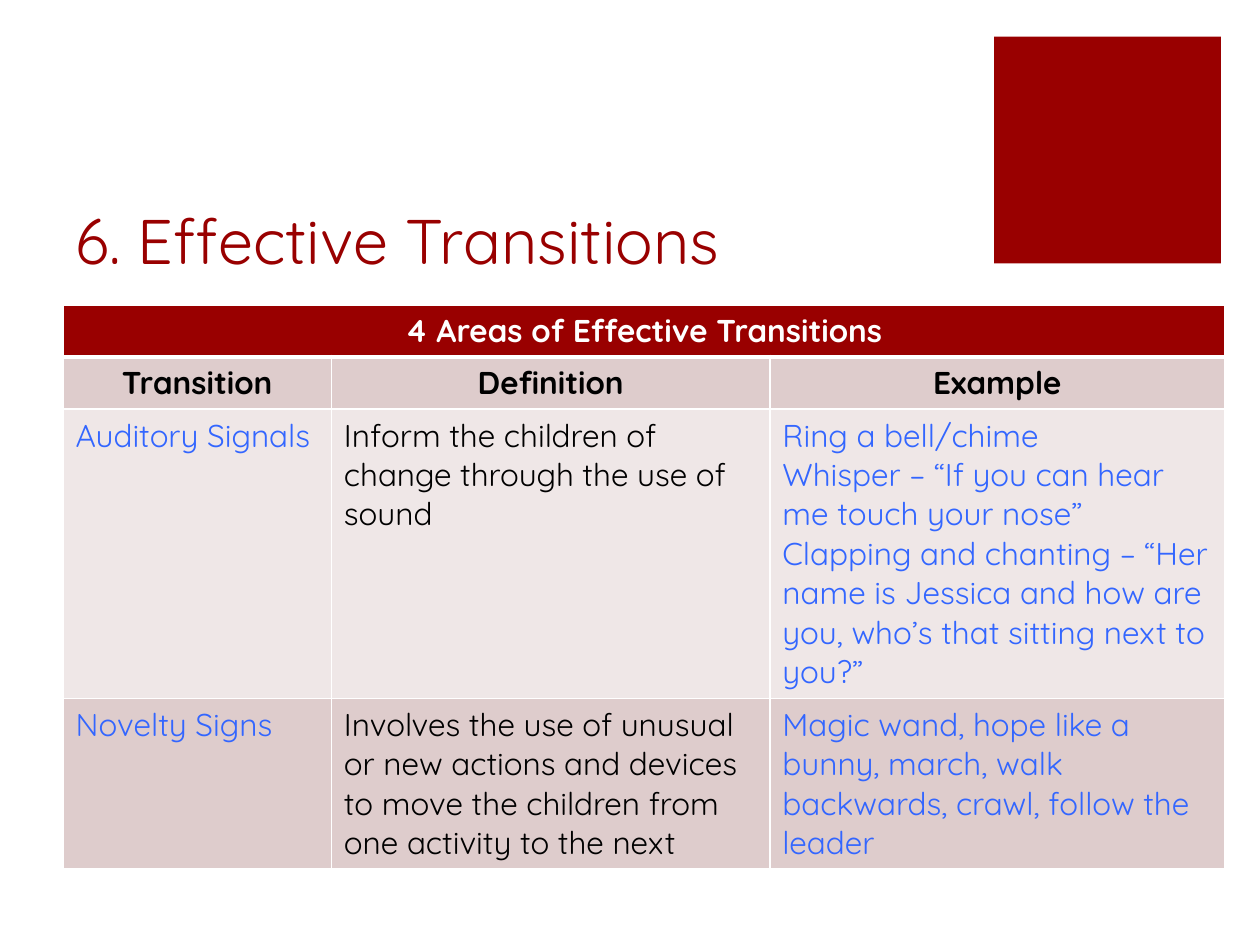
"""Builds the slide on effective transitions with its table of signals and signs."""
from lxml.etree import SubElement
from pptx import Presentation
from pptx.dml.color import RGBColor
from pptx.enum.shapes import MSO_SHAPE
from pptx.enum.text import MSO_ANCHOR, PP_ALIGN
from pptx.oxml.ns import qn
from pptx.util import Inches, Pt

COLORS = {"red": "990000", "rose": "DECCCC", "pale": "EFE7E7",
          "blue": "3366FF", "black": "000000", "white": "FFFFFF"}
FONT = "Quicksand"
ROWS = [
    ["4 Areas of Effective Transitions", "", ""],
    ["Transition", "Definition", "Example"],
    ["Auditory Signals",
     "Inform the children of change through the use of sound",
     "Ring a bell/chime\n"
     "Whisper – “If you can hear me touch your nose”\n"
     "Clapping and chanting – “Her name is Jessica and how are you, "
     "who’s that sitting next to you?”"],
    ["Novelty Signs",
     "Involves the use of unusual or new actions and devices to move "
     "the children from one activity to the next",
     "Magic wand, hope like a bunny, march, walk backwards, crawl, follow the leader"],
]
ROW_FILLS = ["red", "rose", "pale", "rose"]
HEADING_COLORS = ["white", "black"]
BODY_COLORS = ["blue", "black", "blue"]


def rgb(name):
    return RGBColor.from_string(COLORS[name])


def add_border(cell, side, points):
    line = SubElement(cell._tc.get_or_add_tcPr(), qn(f"a:ln{side}"), w=str(Pt(points)))
    fill = SubElement(line, qn("a:solidFill"))
    SubElement(fill, qn("a:srgbClr"), val=COLORS["white"])


prs = Presentation()
prs.slide_width, prs.slide_height = Inches(10), Inches(7.5)
slide = prs.slides.add_slide(prs.slide_layouts[5])

square = slide.shapes.add_shape(
    MSO_SHAPE.RECTANGLE, Inches(7.89), Inches(0.29), Inches(1.8), Inches(1.8))
square.shadow.inherit = False
square.fill.solid()
square.fill.fore_color.rgb = rgb("red")
square.line.fill.background()

title = slide.shapes.title
title.left, title.top = Inches(0.5), Inches(1)
title.width, title.height = Inches(7.12), Inches(1.25)
title.text_frame.text = "6. Effective Transitions"
title.text_frame.vertical_anchor = MSO_ANCHOR.BOTTOM
heading = title.text_frame.paragraphs[0]
heading.alignment = PP_ALIGN.LEFT
heading.font.name, heading.font.size = FONT, Pt(36)
heading.font.color.rgb = rgb("red")

table = slide.shapes.add_table(
    len(ROWS), 3, Inches(0.5), Inches(2.42), Inches(9.22), Inches(1.64)).table
for column, width in zip(table.columns, [2.13, 3.48, 3.61]):
    column.width = Inches(width)
table.cell(0, 0).merge(table.cell(0, 2))

for r, texts in enumerate(ROWS):
    table.rows[r].height = Inches(0.41)
    is_heading = r < len(HEADING_COLORS)
    for c, text in enumerate(texts):
        cell = table.cell(r, c)
        for side in "LRTB":
            thick = (r, side) in [(0, "B"), (1, "T")]
            add_border(cell, side, 3 if thick else 1)
        cell.fill.solid()
        cell.fill.fore_color.rgb = rgb(ROW_FILLS[r])
        if not text:
            continue
        cell.text_frame.text = text
        for paragraph in cell.text_frame.paragraphs:
            paragraph.alignment = PP_ALIGN.CENTER if is_heading else PP_ALIGN.LEFT
            paragraph.font.name, paragraph.font.size = FONT, Pt(18)
            paragraph.font.bold = is_heading
            paragraph.font.color.rgb = rgb(HEADING_COLORS[r] if is_heading else BODY_COLORS[c])

prs.save("out.pptx")
